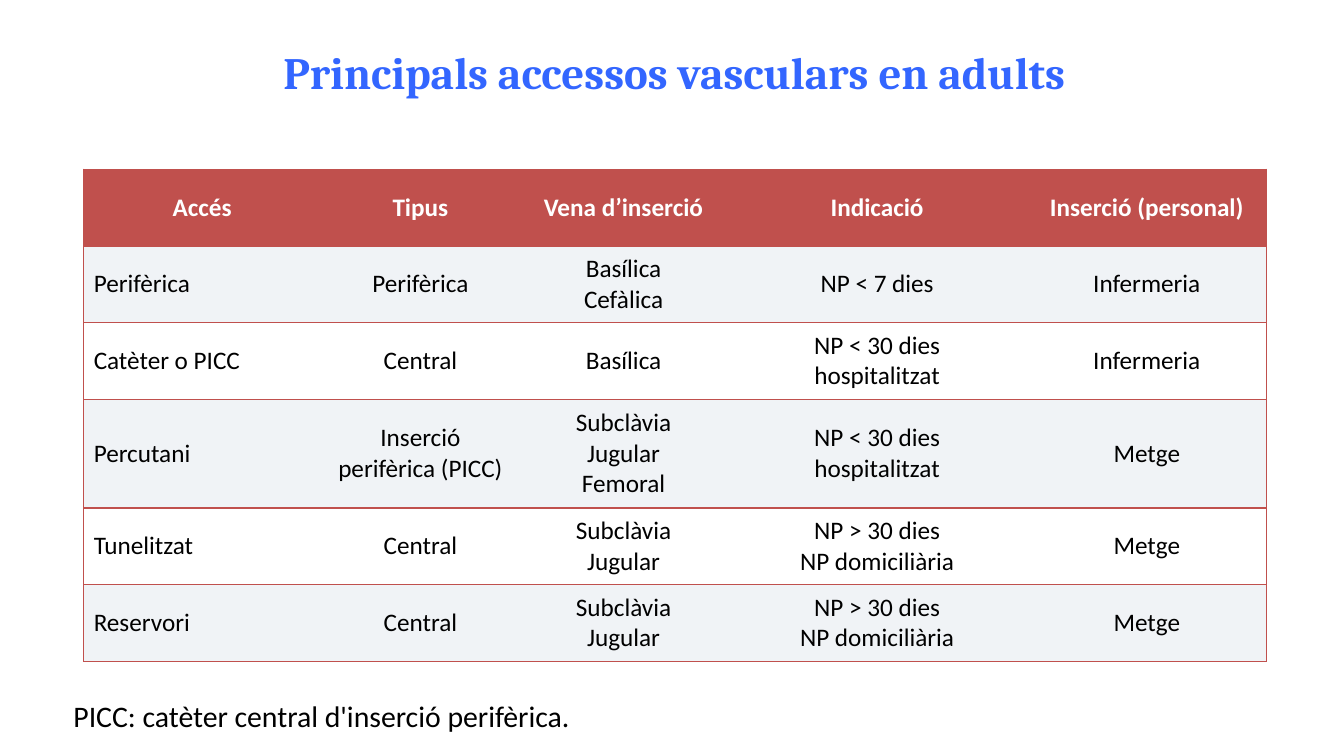
from lxml.etree import SubElement
from pptx import Presentation
from pptx.dml.color import RGBColor
from pptx.enum.text import MSO_ANCHOR as Anchor, MSO_AUTO_SIZE as AutoSize, PP_ALIGN as Align
from pptx.oxml.ns import qn
from pptx.util import Inches, Pt

COLOURS = {
    "title": "3366FF",
    "accent": "C0504D",
    "band": "F0F3F6",
    "white": "FFFFFF",
    "text": "000000",
}
TITLE_FONT = {"name": "Cambria", "size": Pt(32), "bold": True}
HEADER_FONT = {"name": "Calibri", "size": Pt(18), "bold": True}
CELL_FONT = {"name": "Calibri", "size": Pt(18), "bold": False}
NOTE_FONT = {"name": "Calibri", "size": Pt(21.3), "bold": False}

COLUMN_WIDTHS = [2.35, 1.98, 2.05, 2.98, 2.37]
ROW_HEIGHTS = [0.76, 0.76, 0.76, 1.08, 0.76, 0.76]
ROWS = [
    ["Accés", "Tipus", "Vena d’inserció", "Indicació", "Inserció (personal)"],
    ["Perifèrica", "Perifèrica", "Basílica\nCefàlica", "NP < 7 dies", "Infermeria"],
    ["Catèter o PICC", "Central", "Basílica", "NP < 30 dies\nhospitalitzat", "Infermeria"],
    ["Percutani", "Inserció perifèrica (PICC)", "Subclàvia\nJugular\nFemoral",
     "NP < 30 dies\nhospitalitzat", "Metge"],
    ["Tunelitzat", "Central", "Subclàvia\nJugular", "NP > 30 dies\nNP domiciliària", "Metge"],
    ["Reservori", "Central", "Subclàvia\nJugular", "NP > 30 dies\nNP domiciliària", "Metge"],
]


def colour(name):
    return RGBColor.from_string(COLOURS[name])


def add_run(paragraph, text, font, colour_name):
    run = paragraph.add_run()
    run.text = text
    for attribute, value in font.items():
        setattr(run.font, attribute, value)
    run.font.color.rgb = colour(colour_name)


def set_borders(cell, visible_sides):
    properties = cell._tc.get_or_add_tcPr()
    for side in "LRTB":
        line = SubElement(properties, qn(f"a:ln{side}"), w=str(Pt(1)))
        if side in visible_sides:
            fill = SubElement(line, qn("a:solidFill"))
            SubElement(fill, qn("a:srgbClr"), val=COLOURS["accent"])
        else:
            SubElement(line, qn("a:noFill"))


def fill_cell(cell, text, font, text_colour, fill_colour, alignment):
    cell.vertical_anchor = Anchor.MIDDLE
    cell.fill.solid()
    cell.fill.fore_color.rgb = colour(fill_colour)
    frame = cell.text_frame
    for index, line in enumerate(text.split("\n")):
        paragraph = frame.add_paragraph() if index else frame.paragraphs[0]
        paragraph.alignment = alignment
        add_run(paragraph, line, font, text_colour)


def add_access_table(slide):
    table = slide.shapes.add_table(
        len(ROWS), len(COLUMN_WIDTHS), Inches(0.83), Inches(1.68),
        Inches(sum(COLUMN_WIDTHS)), Inches(sum(ROW_HEIGHTS)),
    ).table
    for column, width in zip(table.columns, COLUMN_WIDTHS):
        column.width = Inches(width)
    for row, height in zip(table.rows, ROW_HEIGHTS):
        row.height = Inches(height)
    last_column = len(COLUMN_WIDTHS) - 1
    for row_index, texts in enumerate(ROWS):
        is_header = row_index == 0
        font = HEADER_FONT if is_header else CELL_FONT
        text_colour = "white" if is_header else "text"
        fill_colour = "accent" if is_header else ("white", "band")[row_index % 2]
        for column_index, text in enumerate(texts):
            cell = table.cell(row_index, column_index)
            outer_side = {0: "L", last_column: "R"}.get(column_index, "")
            set_borders(cell, "TB" + outer_side)
            is_label = column_index == 0 and not is_header
            alignment = Align.LEFT if is_label else Align.CENTER
            fill_cell(cell, text, font, text_colour, fill_colour, alignment)


def place_title(slide, text):
    title = slide.shapes.title
    title.left, title.top = Inches(2.71), Inches(0.39)
    title.width, title.height = Inches(8.31), Inches(0.64)
    frame = title.text_frame
    frame.word_wrap = True
    frame.auto_size = AutoSize.SHAPE_TO_FIT_TEXT
    frame.vertical_anchor = Anchor.TOP
    paragraph = frame.paragraphs[0]
    paragraph.alignment = Align.LEFT
    add_run(paragraph, text, TITLE_FONT, "title")


def add_note(slide, text):
    box = slide.shapes.add_textbox(Inches(0.63), Inches(6.88), Inches(5.59), Inches(0.44))
    frame = box.text_frame
    frame.word_wrap = True
    frame.vertical_anchor = Anchor.MIDDLE
    add_run(frame.paragraphs[0], text, NOTE_FONT, "text")


def main():
    presentation = Presentation()
    presentation.slide_width = Inches(13.33)
    presentation.slide_height = Inches(7.5)
    slide = presentation.slides.add_slide(presentation.slide_layouts.get_by_name("Title Only"))
    place_title(slide, "Principals accessos vasculars en adults")
    add_access_table(slide)
    add_note(slide, "PICC: catèter central d'inserció perifèrica.")
    presentation.save("out.pptx")


if __name__ == "__main__":
    main()
